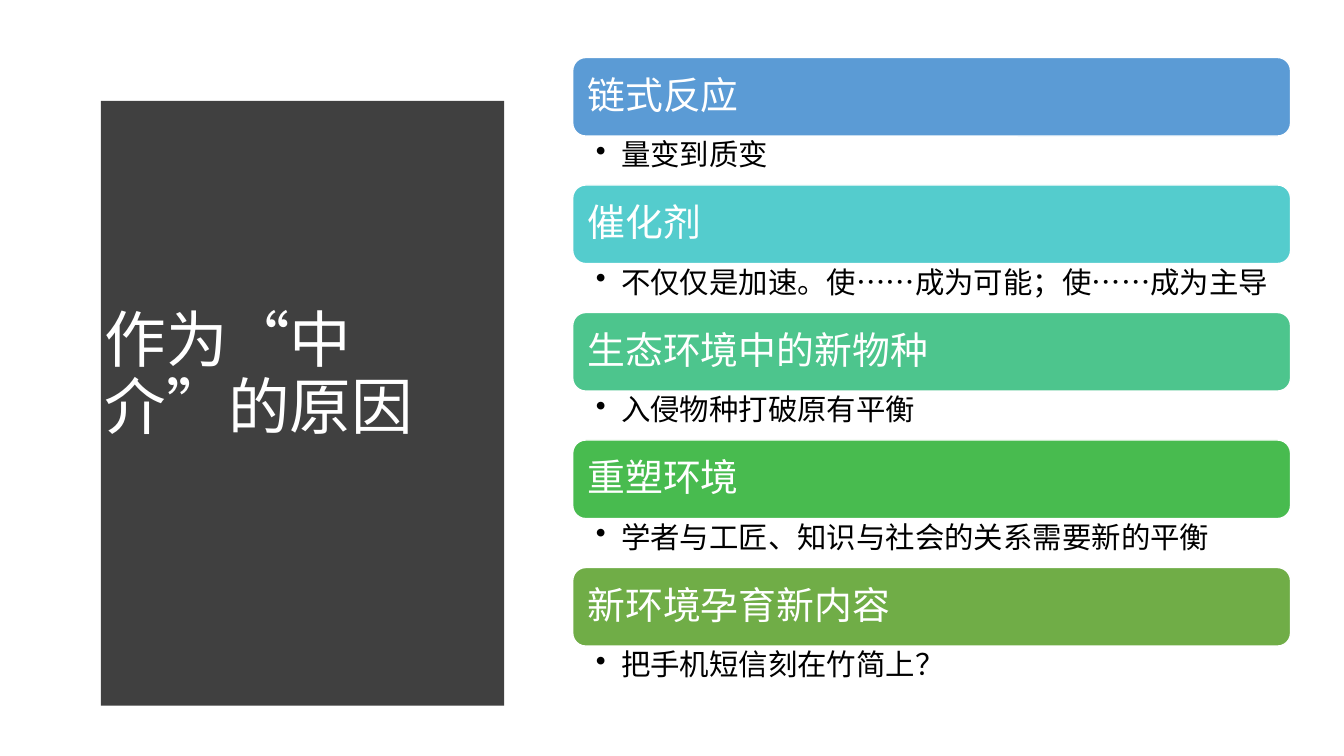
from dataclasses import dataclass

import pptx
import pptx.dml.color
import pptx.enum.shapes
import pptx.enum.text
import pptx.oxml.ns
import pptx.util
from lxml import etree
from pptx.util import Inches

ANCHOR = pptx.enum.text.MSO_ANCHOR


@dataclass(frozen=True)
class Theme:
    font: str = "Noto Sans CJK SC"
    panel: str = "404040"
    light: str = "FFFFFF"
    dark: str = "000000"
    title_size: int = 44
    heading_size: int = 27
    detail_size: int = 21


THEME = Theme()

REASONS = [
    ("链式反应", "量变到质变", "5B9BD5"),
    ("催化剂", "不仅仅是加速。使……成为可能；使……成为主导", "54CCCD"),
    ("生态环境中的新物种", "入侵物种打破原有平衡", "4DC58D"),
    ("重塑环境", "学者与工匠、知识与社会的关系需要新的平衡", "48BB4F"),
    ("新环境孕育新内容", "把手机短信刻在竹简上？", "70AD47"),
]
LIST_LEFT, LIST_WIDTH = 5.68, 7.12
FIRST_TOP, LAST_TOP = 0.57, 5.63
HEADING_HEIGHT, DETAIL_HEIGHT = 0.78, 0.49


def rgb(color):
    return pptx.dml.color.RGBColor.from_string(color)


def add_child(parent, tag, **attributes):
    return etree.SubElement(parent, pptx.oxml.ns.qn(tag), **attributes)


def set_margins(tf, left, top, right, bottom):
    tf.margin_left, tf.margin_top = Inches(left), Inches(top)
    tf.margin_right, tf.margin_bottom = Inches(right), Inches(bottom)


def write(tf, text, size, color, anchor, bullet=False):
    tf.word_wrap = True
    tf.auto_size = pptx.enum.text.MSO_AUTO_SIZE.NONE
    tf.vertical_anchor = anchor
    p = tf.paragraphs[0]
    p.text = text
    p.alignment = pptx.enum.text.PP_ALIGN.LEFT
    p.line_spacing = 0.9
    if bullet:
        p.level = 1
        pPr = p._p.get_or_add_pPr()
        pPr.set("marL", str(Inches(0.25)))
        pPr.set("indent", str(Inches(-0.25)))
        add_child(pPr, "a:buChar", char="•")
    p.font.size = pptx.util.Pt(size)
    p.font.color.rgb = rgb(color)
    p.font.name = THEME.font
    add_child(p.font._element, "a:ea", typeface=THEME.font)


def add_panel(s, left, top, width, height, bulge, steps=48):
    edge = left + width - bulge
    curve = []
    for i in range(1, steps + 1):
        t = i / steps
        curve.append((edge + 4 * bulge * t * (1 - t), top + height * t))
    builder = s.shapes.build_freeform(left, top, scale=Inches(1))
    builder.add_line_segments([(edge, top), *curve, (left, top + height)], close=True)
    panel = builder.convert_to_shape()
    panel.shadow.inherit = False
    panel.fill.solid()
    panel.fill.fore_color.rgb = rgb(THEME.panel)
    panel.line.fill.background()
    return panel


def add_title(s, text, panel):
    title = s.shapes.title
    title.left, title.top = Inches(0.94), Inches(1.11)
    title.width, title.height = Inches(3.74), Inches(5.24)
    write(title.text_frame, text, THEME.title_size, THEME.light, ANCHOR.MIDDLE)
    title.element.addprevious(panel.element)


def add_heading(s, top, text, color):
    sp = s.shapes.add_shape(
        pptx.enum.shapes.MSO_SHAPE.ROUNDED_RECTANGLE,
        Inches(LIST_LEFT), Inches(top), Inches(LIST_WIDTH), Inches(HEADING_HEIGHT))
    sp.shadow.inherit = False
    sp.fill.solid()
    sp.fill.fore_color.rgb = rgb(color)
    sp.line.color.rgb = rgb(THEME.light)
    sp.line.width = pptx.util.Pt(1)
    set_margins(sp.text_frame, 0.11, 0.11, 0.11, 0.11)
    write(sp.text_frame, text, THEME.heading_size, THEME.light, ANCHOR.MIDDLE)


def add_detail(s, top, text):
    sp = s.shapes.add_textbox(
        Inches(LIST_LEFT), Inches(top), Inches(LIST_WIDTH), Inches(DETAIL_HEIGHT))
    set_margins(sp.text_frame, 0.23, 0.04, 0.21, 0.04)
    write(sp.text_frame, text, THEME.detail_size, THEME.dark, ANCHOR.TOP, bullet=True)


def main():
    prs = pptx.Presentation()
    prs.slide_width, prs.slide_height = Inches(13.33), Inches(7.5)
    s = prs.slides.add_slide(prs.slide_layouts[5])
    panel = add_panel(s, 0.53, 0.52, 4.79, 6.44, bulge=0.24)
    add_title(s, "作为“中介”的原因", panel)
    pitch = (LAST_TOP - FIRST_TOP) / (len(REASONS) - 1)
    for i, (heading, detail, color) in enumerate(REASONS):
        top = FIRST_TOP + i * pitch
        add_heading(s, top, heading, color)
        add_detail(s, top + HEADING_HEIGHT, detail)
    prs.save("out.pptx")


if __name__ == "__main__":
    main()
